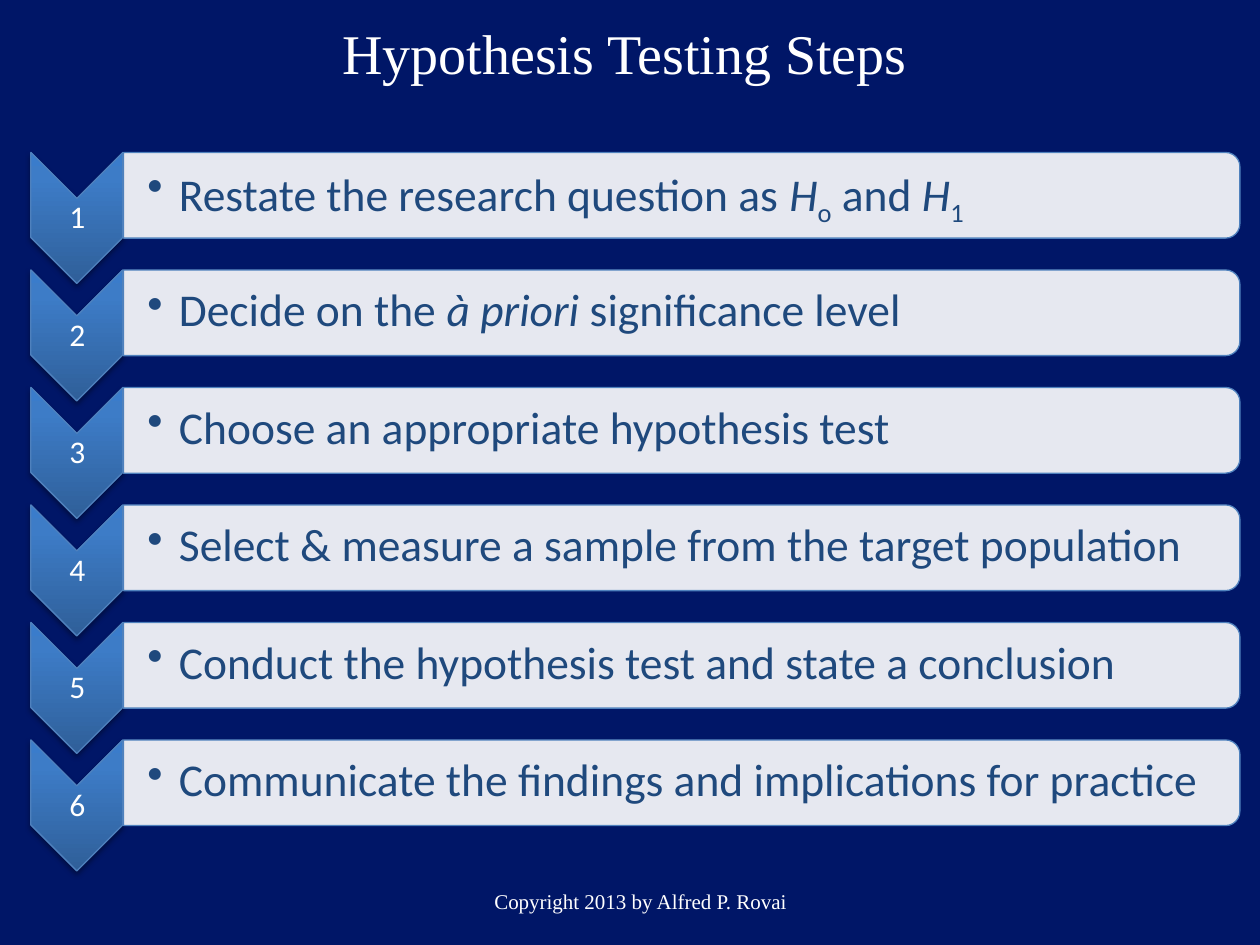
"""Build the Hypothesis Testing Steps slide."""
from pptx import Presentation
from pptx.dml.color import RGBColor
from pptx.enum.shapes import MSO_SHAPE
from pptx.enum.text import MSO_ANCHOR, PP_ALIGN
from pptx.oxml import parse_xml
from pptx.oxml.ns import nsdecls, qn
from pptx.util import Inches, Pt

TITLE = "Hypothesis Testing Steps"
COPYRIGHT = "Copyright 2013 by Alfred P. Rovai"
STEPS = [
    [("Restate the research question as ", ""), ("H", "italic"), ("o", "sub"),
     (" and ", ""), ("H", "italic"), ("1", "sub")],
    [("Decide on the ", ""), ("à priori ", "italic"), ("significance level", "")],
    [("Choose an appropriate hypothesis test", "")],
    [("Select & measure a sample from the target population", "")],
    [("Conduct the hypothesis test and state a conclusion", "")],
    [("Communicate the findings and implications for practice", "")],
]
NAVY, WHITE, INK, BLUE = "001667", "FFFFFF", "1F497D", "4F81BD"
GRADIENT = [(0, "2F5F99"), (80, "3D7CC7"), (100, "3A7CCB")]
SERIF, SANS = "Times New Roman", "Calibri"
STEP_PITCH = 0.9325
BAR_MIDDLE, CHEVRON_MIDDLE = 1.55, 1.73


def rgb(value):
    return RGBColor.from_string(value)


def write(frame, runs, font, size, color, align, inset=None):
    frame.word_wrap = True
    frame.vertical_anchor = MSO_ANCHOR.MIDDLE
    if inset is not None:
        frame.margin_left = frame.margin_right = Inches(inset)
        frame.margin_top = frame.margin_bottom = Inches(inset)
    paragraph = frame.paragraphs[0]
    paragraph.alignment = align
    for words, style in runs:
        run = paragraph.add_run()
        run.text = words
        run.font.name, run.font.size = font, Pt(size)
        run.font.color.rgb = rgb(color)
        run.font.italic = style == "italic"
        if style == "sub":
            run._r.get_or_add_rPr().set("baseline", "-25000")
    return paragraph


def add_upright(shapes, kind, center, middle, length, depth):
    """Add a preset turned by 90 degrees about its centre."""
    shape = shapes.add_shape(kind, Inches(center - length / 2), Inches(middle - depth / 2),
                             Inches(length), Inches(depth))
    shape.rotation = 90
    shape.shadow.inherit = False
    shape.line.color.rgb = rgb(BLUE)
    shape.line.width = Pt(0.75)
    return shape


def add_chevron(shapes, number, middle):
    chevron = add_upright(shapes, MSO_SHAPE.CHEVRON, 0.61, middle, 1.04, 0.73)
    chevron.fill.background()
    properties = chevron._element.spPr
    stops = "".join(f'<a:gs pos="{at * 1000}"><a:srgbClr val="{color}"/></a:gs>'
                    for at, color in GRADIENT)
    properties.replace(properties.find(qn("a:noFill")), parse_xml(
        f'<a:gradFill {nsdecls("a")} rotWithShape="0"><a:gsLst>{stops}</a:gsLst>'
        '<a:lin ang="16200000" scaled="0"/></a:gradFill>'))
    properties.find(qn("a:effectLst")).append(parse_xml(
        f'<a:outerShdw {nsdecls("a")} blurRad="{Pt(3.1)}" dist="{Pt(1.8)}" dir="5400000" '
        'rotWithShape="0"><a:srgbClr val="000000"><a:alpha val="35000"/></a:srgbClr>'
        '</a:outerShdw>'))
    label = shapes.add_textbox(Inches(0.25), Inches(middle - 0.15), Inches(0.73), Inches(0.31))
    paragraph = write(label.text_frame, [(str(number), "")], SANS, 18, WHITE,
                      PP_ALIGN.CENTER, 0.01)
    paragraph.line_spacing = 0.9


def add_bar(shapes, runs, middle):
    bar = add_upright(shapes, MSO_SHAPE.ROUND_2_SAME_RECTANGLE, 5.41, middle, 0.68, 8.86)
    bar.fill.solid()
    bar.fill.fore_color.rgb = rgb(WHITE)
    fill_color = bar._element.spPr.find(qn("a:solidFill"))[0]
    fill_color.append(parse_xml(f'<a:alpha {nsdecls("a")} val="90000"/>'))
    label = shapes.add_textbox(Inches(0.97), Inches(middle - 0.31), Inches(8.83), Inches(0.61))
    paragraph = write(label.text_frame, runs, SANS, 26, INK, PP_ALIGN.LEFT, 0.02)
    label.text_frame.margin_left = Inches(0.2)
    paragraph.line_spacing = 0.9
    indents = paragraph._p.get_or_add_pPr()
    indents.set("marL", str(Inches(0.25)))
    indents.set("indent", str(-Inches(0.25)))
    indents.append(parse_xml(f'<a:buChar {nsdecls("a")} char="•"/>'))


def main():
    deck = Presentation()
    deck.slide_width, deck.slide_height = Inches(10), Inches(7.5)
    slide = deck.slides.add_slide(deck.slide_layouts[5])
    slide.background.fill.solid()
    slide.background.fill.fore_color.rgb = rgb(NAVY)

    title = slide.shapes.title
    title.left, title.top = Inches(0.42), Inches(0)
    title.width, title.height = Inches(9.08), Inches(0.83)
    write(title.text_frame, [(TITLE, "")], SERIF, 32, WHITE, PP_ALIGN.CENTER)

    notice = slide.shapes.add_textbox(Inches(1.75), Inches(6.95), Inches(6.67), Inches(0.4))
    write(notice.text_frame, [(COPYRIGHT, "")], SERIF, 12, WHITE, PP_ALIGN.CENTER)

    process = slide.shapes.add_group_shape().shapes
    for index, runs in enumerate(STEPS):
        offset = index * STEP_PITCH
        add_chevron(process, index + 1, CHEVRON_MIDDLE + offset)
        add_bar(process, runs, BAR_MIDDLE + offset)

    deck.save("out.pptx")


if __name__ == "__main__":
    main()
